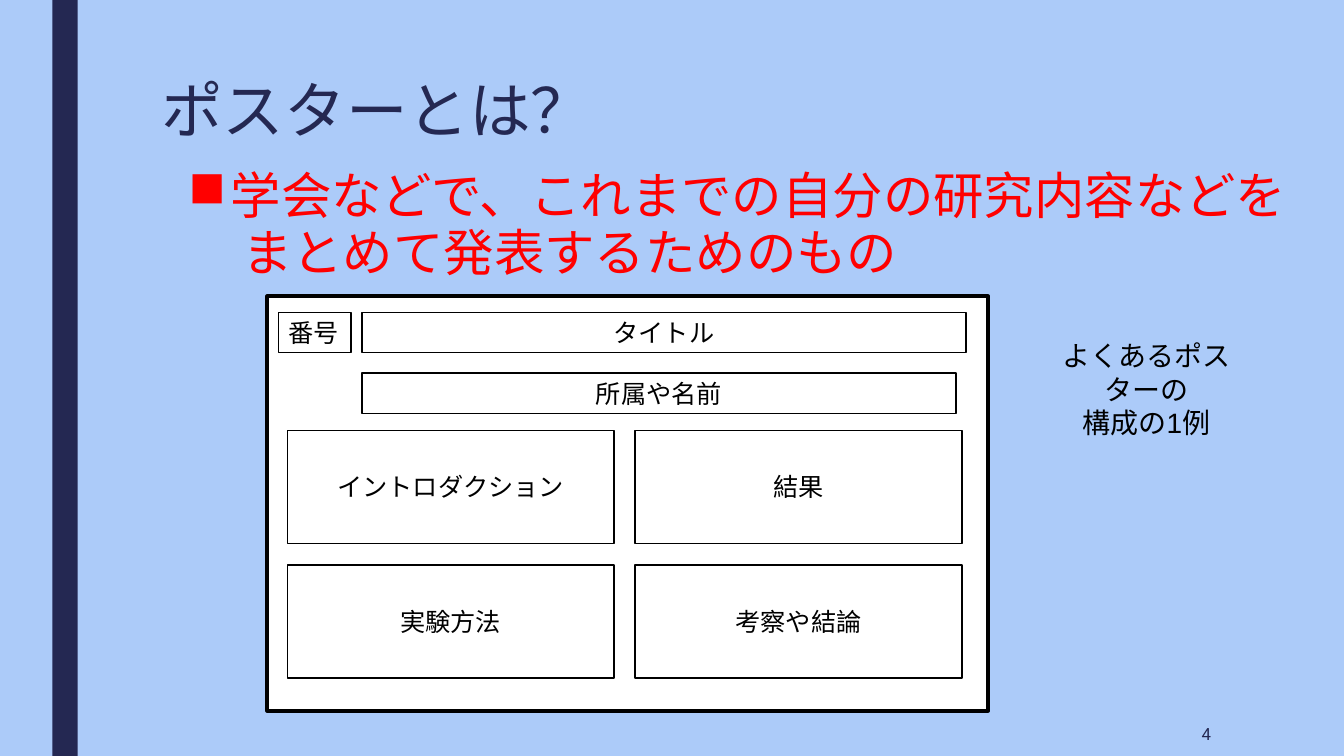
import lxml.etree
import pptx
import pptx.dml.color
import pptx.enum.shapes
import pptx.enum.text
import pptx.oxml
import pptx.oxml.ns
import pptx.util

ALIGN = pptx.enum.text.PP_ALIGN
ANCHOR = pptx.enum.text.MSO_ANCHOR


def colour(value):
    return pptx.dml.color.RGBColor.from_string(value)


class PosterSlide:
    NAVY, RED, BLACK, WHITE, SKY = "242852", "FF0000", "000000", "FFFFFF", "ACCBF9"
    COLUMNS, ROWS = 133.3, 75

    def __init__(self, presentation):
        self.column = presentation.slide_width / self.COLUMNS
        self.row = presentation.slide_height / self.ROWS
        self.slide = presentation.slides.add_slide(presentation.slide_layouts[5])
        self.slide.background.fill.solid()
        self.slide.background.fill.fore_color.rgb = colour(self.SKY)

    def place(self, left, top, width, height):
        return (round(left * self.column), round(top * self.row),
                round(width * self.column), round(height * self.row))

    def set_text(self, shape, lines, size, ink, align=ALIGN.LEFT, anchor=ANCHOR.TOP,
                 font="Arial", spacing=None):
        frame = shape.text_frame
        frame.auto_size = pptx.enum.text.MSO_AUTO_SIZE.NONE
        frame.word_wrap = True
        frame.vertical_anchor = anchor
        frame.text = lines
        for paragraph in frame.paragraphs:
            paragraph.alignment = align
            paragraph.line_spacing = spacing
            paragraph.font.size = pptx.util.Pt(size)
            paragraph.font.name = font
            paragraph.font.color.rgb = colour(ink)
        return frame

    def title(self, area, words):
        heading = self.slide.shapes.title
        heading.left, heading.top, heading.width, heading.height = self.place(*area)
        self.set_text(heading, words, 44, self.NAVY, spacing=0.89)

    def text(self, area, lines, size, ink, **style):
        box = self.slide.shapes.add_textbox(*self.place(*area))
        return self.set_text(box, lines, size, ink, **style)

    def bullet(self, area, words):
        paragraph = self.text(area, words, 36, self.RED, spacing=0.94).paragraphs[0]
        paragraph.space_before = pptx.util.Pt(10)
        paragraph.space_after = pptx.util.Pt(2)
        properties = paragraph._p.get_or_add_pPr()
        indent = round(4.2 * self.column)
        properties.set("marL", str(indent))
        properties.set("indent", str(-indent))
        mark = lxml.etree.Element(pptx.oxml.ns.qn("a:buChar"), char="■")
        properties.insert_element_before(mark, "a:tabLst", "a:defRPr", "a:extLst")

    def caption(self, area, lines, margin):
        frame = self.text(area, lines, 20, self.BLACK, align=ALIGN.CENTER)
        frame.margin_left = frame.margin_right = round(margin * self.column)

    def panel(self, area, fill, line=None, weight=1, parent=None):
        shapes = (parent or self.slide).shapes
        panel = shapes.add_shape(pptx.enum.shapes.MSO_SHAPE.RECTANGLE, *self.place(*area))
        panel.shadow.inherit = False
        panel.fill.solid()
        panel.fill.fore_color.rgb = colour(fill)
        if line:
            panel.line.color.rgb = colour(line)
            panel.line.width = pptx.util.Pt(weight)
        else:
            panel.line.fill.background()
        return panel

    def section(self, poster, area, words, align=ALIGN.CENTER, anchor=ANCHOR.MIDDLE):
        section = self.panel(area, self.WHITE, self.BLACK, parent=poster)
        self.set_text(section, words, 18, self.BLACK, align=align, anchor=anchor)

    def poster(self, area):
        poster = self.slide.shapes.add_group_shape()
        self.panel(area, self.WHITE, self.BLACK, 2.75, poster)
        return poster


def main():
    presentation = pptx.Presentation()
    presentation.slide_width = pptx.util.Inches(13.33)
    presentation.slide_height = pptx.util.Inches(7.5)
    page = PosterSlide(presentation)

    page.panel((5.2, 0, 2.5, page.ROWS), page.NAVY)
    page.title((15, 7.5, 105, 16.2), "ポスターとは？")
    page.bullet((17.7, 16.3, 110.9, 46.1),
                "学会などで、これまでの自分の研究内容などを  まとめて発表するためのもの")
    page.text((103.6, 70.6, 17.5, 4.4), "4", 12, page.NAVY,
              align=ALIGN.RIGHT, anchor=ANCHOR.MIDDLE, font="Roboto")

    poster = page.poster((26.5, 29.4, 71.5, 41.1))
    page.section(poster, (35.9, 31, 59.9, 4), "タイトル", anchor=ANCHOR.TOP)
    page.section(poster, (27.6, 31, 7.2, 4), "番号", ALIGN.LEFT, ANCHOR.TOP)
    page.section(poster, (35.9, 37, 58.9, 4), "所属や名前", anchor=ANCHOR.TOP)
    contents = (("イントロダクション", "結果"), ("実験方法", "考察や結論"))
    for row, sections in enumerate(contents):
        for column, words in enumerate(sections):
            area = (28.5 + 34.5 * column, 42.7 + 13.35 * row, 32.4, 11.2)
            page.section(poster, area, words)

    page.caption((101.7, 33.1, 24, 7.7), "よくあるポスターの\n構成の1例", margin=3)
    presentation.save("out.pptx")


if __name__ == "__main__":
    main()
